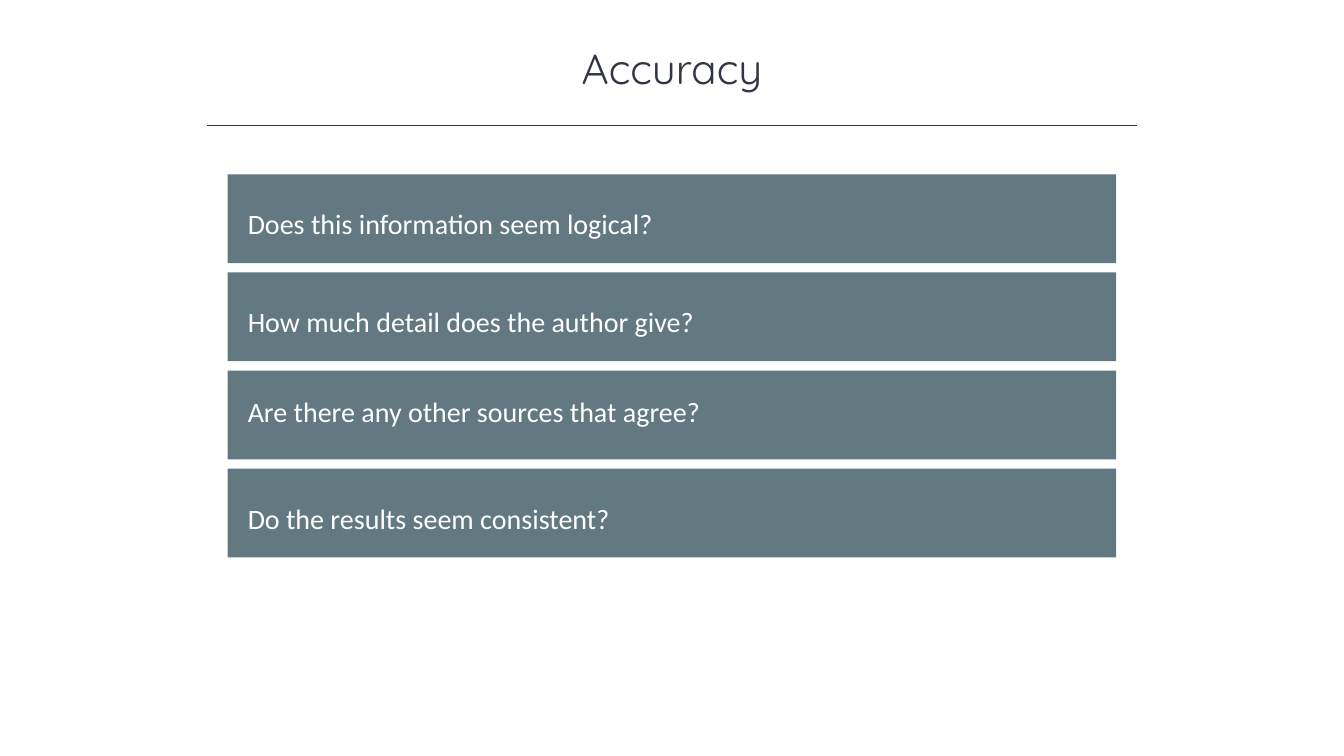
import pptx
import pptx.util
import pptx.dml.color
import pptx.enum.shapes
import pptx.enum.text
import pptx.oxml.ns
import lxml.etree

Pt = pptx.util.Pt
INK, SLATE, WHITE = "323542", "627981", "FFFFFF"


def color(code):
    return pptx.dml.color.RGBColor.from_string(code)


class Page:
    head_font = "Quicksand"
    text_font = "Calibri"

    def __init__(self, deck):
        self.slide = deck.slides.add_slide(deck.slide_layouts[5])
        fill = self.slide.background.fill
        fill.solid()
        fill.fore_color.rgb = color(WHITE)

    def letter(self, shape, text, font, size, code, align):
        frame = shape.text_frame
        frame.text = text
        frame.word_wrap = True
        frame.auto_size = pptx.enum.text.MSO_AUTO_SIZE.SHAPE_TO_FIT_TEXT
        frame.vertical_anchor = pptx.enum.text.MSO_ANCHOR.TOP
        line = frame.paragraphs[0]
        line.alignment = align
        for run in line.runs:
            run.font.name = font
            run.font.size = Pt(size)
            run.font.color.rgb = color(code)

    def title(self, text, left, top, width, height):
        shape = self.slide.shapes.title
        shape.left, shape.top = Pt(left), Pt(top)
        shape.width, shape.height = Pt(width), Pt(height)
        self.letter(shape, text, self.head_font, 30, INK, pptx.enum.text.PP_ALIGN.CENTER)

    def rule(self, left, right, top):
        line = self.slide.shapes.add_connector(
            pptx.enum.shapes.MSO_CONNECTOR.STRAIGHT, Pt(left), Pt(top), Pt(right), Pt(top))
        line.line.color.rgb = color(INK)
        line.line.width = Pt(1)
        lxml.etree.SubElement(line._element.spPr, pptx.oxml.ns.qn("a:effectLst"))

    def bar(self, left, top, width, height):
        shape = self.slide.shapes.add_shape(
            pptx.enum.shapes.MSO_SHAPE.RECTANGLE, Pt(left), Pt(top), Pt(width), Pt(height))
        shape.shadow.inherit = False
        shape.fill.solid()
        shape.fill.fore_color.rgb = color(SLATE)
        shape.line.fill.background()
        return shape

    def label(self, text, left, top, width, height):
        shape = self.bar(left, top, width, height)
        self.letter(shape, text, self.text_font, 20, WHITE, pptx.enum.text.PP_ALIGN.LEFT)


def main():
    deck = pptx.Presentation()
    deck.slide_width, deck.slide_height = Pt(960), Pt(540)
    page = Page(deck)
    page.title("Accuracy", 120, 26.6, 720, 44)
    page.rule(148, 812, 89.5)
    asks = [
        ("Does this information seem logical?", 19.7),
        ("How much detail does the author give?", 19.7),
        ("Are there any other sources that agree?", 13.5),
        ("Do the results seem consistent?", 19.7),
    ]
    for row, (text, drop) in enumerate(asks):
        top = 124.5 + row * 70.1
        page.bar(162.7, top, 634.5, 63.4)
        page.label(text, 169.9, top + drop, 615, 31.5)
    deck.save("out.pptx")


if __name__ == "__main__":
    main()
